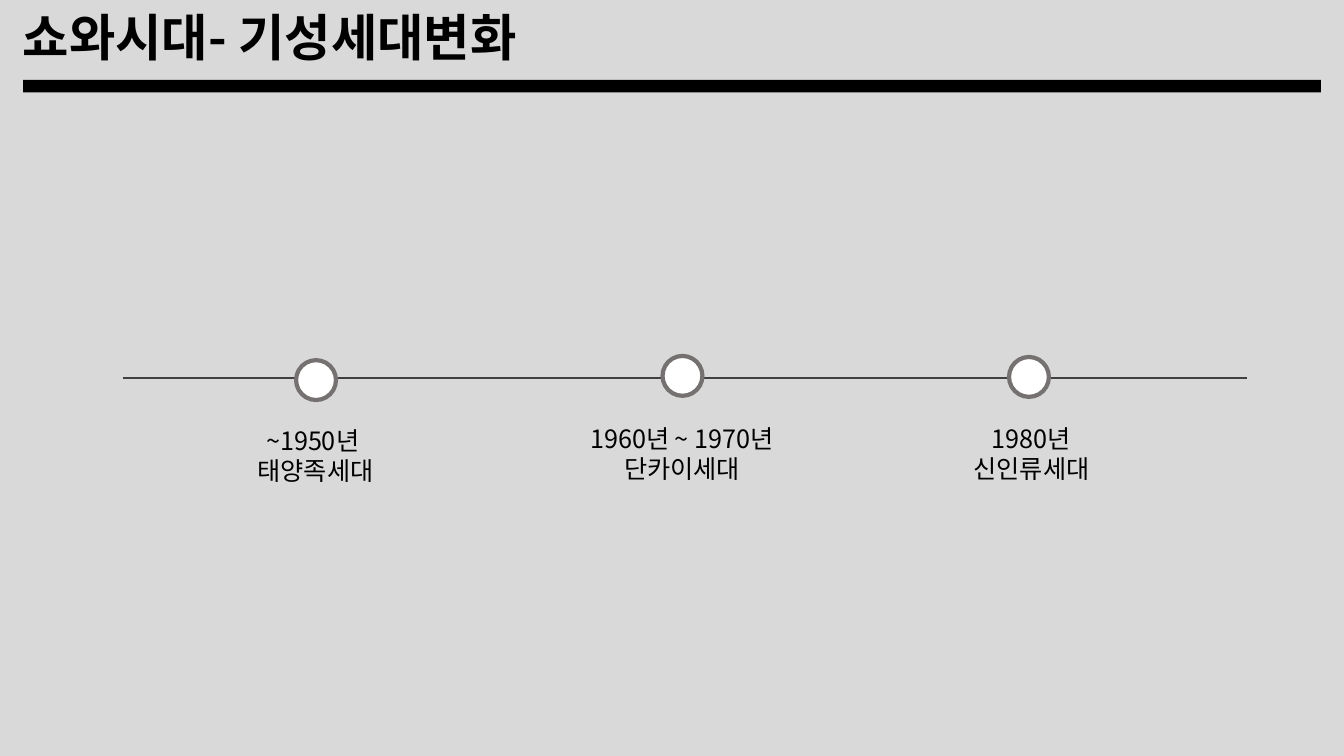
from pptx import Presentation
from pptx.dml.color import RGBColor
from pptx.enum.shapes import MSO_CONNECTOR as CONN, MSO_SHAPE as SHAPE
from pptx.enum.text import MSO_ANCHOR as ANCHOR, MSO_AUTO_SIZE as AUTO, PP_ALIGN as ALIGN
from pptx.oxml.ns import qn
from pptx.util import Emu, Pt

BACKGROUND = RGBColor(0xD9, 0xD9, 0xD9)
BLACK = RGBColor(0x00, 0x00, 0x00)
WHITE = RGBColor(0xFF, 0xFF, 0xFF)
AXIS_GRAY = RGBColor(0x40, 0x40, 0x40)
RING_GRAY = RGBColor(0x76, 0x71, 0x71)

FONT = "Noto Sans CJK KR"
EMU_PER_PX = 9525
MARKER_SIZE = 38
LABEL_SIZE = (319, 68)

ERAS = [
    ((282, 343), (141, 400), ["~1950년 ", "태양족세대"]),
    ((631, 339), (490, 398), ["1960년 ~ 1970년", "단카이세대"]),
    ((961, 340), (823, 398), ["1980년", "신인류세대"]),
]


def px(*lengths):
    return [Emu(n * EMU_PER_PX) for n in lengths]


class SlideBuilder:
    title_format = {"size": Pt(36), "bold": True, "name": FONT}
    label_format = {"size": Pt(18), "bold": False, "name": FONT}

    def __init__(self, prs):
        self.slide = prs.slides.add_slide(prs.slide_layouts[5])
        fill = self.slide.background.fill
        fill.solid()
        fill.fore_color.rgb = BACKGROUND

    def set_text(self, sp, lines, formats, align):
        tf = sp.text_frame
        frame_formats = {"word_wrap": True, "vertical_anchor": ANCHOR.TOP,
                         "auto_size": AUTO.SHAPE_TO_FIT_TEXT}
        for key, value in frame_formats.items():
            setattr(tf, key, value)
        tf.text = "\n".join(lines)
        for p in tf.paragraphs:
            p.alignment = align
            for r in p.runs:
                for key, value in formats.items():
                    setattr(r.font, key, value)
                r.font.color.rgb = BLACK
                r_pr = r._r.get_or_add_rPr()
                ea = r_pr.makeelement(qn("a:ea"), {"typeface": FONT})
                r_pr.find(qn("a:latin")).addnext(ea)

    def title(self, text, x, y, w, h):
        sp = self.slide.shapes.title
        sp.left, sp.top, sp.width, sp.height = px(x, y, w, h)
        self.set_text(sp, [text], self.title_format, ALIGN.LEFT)

    def label(self, lines, x, y, w, h):
        sp = self.slide.shapes.add_textbox(*px(x, y, w, h))
        self.set_text(sp, lines, self.label_format, ALIGN.CENTER)

    def shape(self, kind, x, y, w, h, fill, line=None, weight=0):
        sp = self.slide.shapes.add_shape(kind, *px(x, y, w, h))
        sp.shadow.inherit = False
        sp.fill.solid()
        sp.fill.fore_color.rgb = fill
        if line is None:
            sp.line.fill.background()
        else:
            sp.line.color.rgb = line
            sp.line.width = Pt(weight)

    def line(self, x1, y1, x2, y2, color, weight):
        sp = self.slide.shapes.add_connector(CONN.STRAIGHT, *px(x1, y1, x2, y2))
        sp.line.color.rgb = color
        sp.line.width = Pt(weight)
        sp_pr = sp._element.spPr
        sp_pr.append(sp_pr.makeelement(qn("a:effectLst"), {}))


def main():
    prs = Presentation()
    prs.slide_width, prs.slide_height = px(1280, 720)
    builder = SlideBuilder(prs)
    builder.shape(SHAPE.RECTANGLE, 22, 76, 1236, 12, BLACK)
    builder.title("쇼와시대- 기성세대변화", 12, 1, 541, 68)
    builder.line(117, 360, 1188, 360, AXIS_GRAY, 1.5)
    for marker, label, lines in ERAS:
        builder.shape(SHAPE.OVAL, *marker, MARKER_SIZE, MARKER_SIZE, WHITE, RING_GRAY, 3)
        builder.label(lines, *label, *LABEL_SIZE)
    prs.save("out.pptx")


if __name__ == "__main__":
    main()
